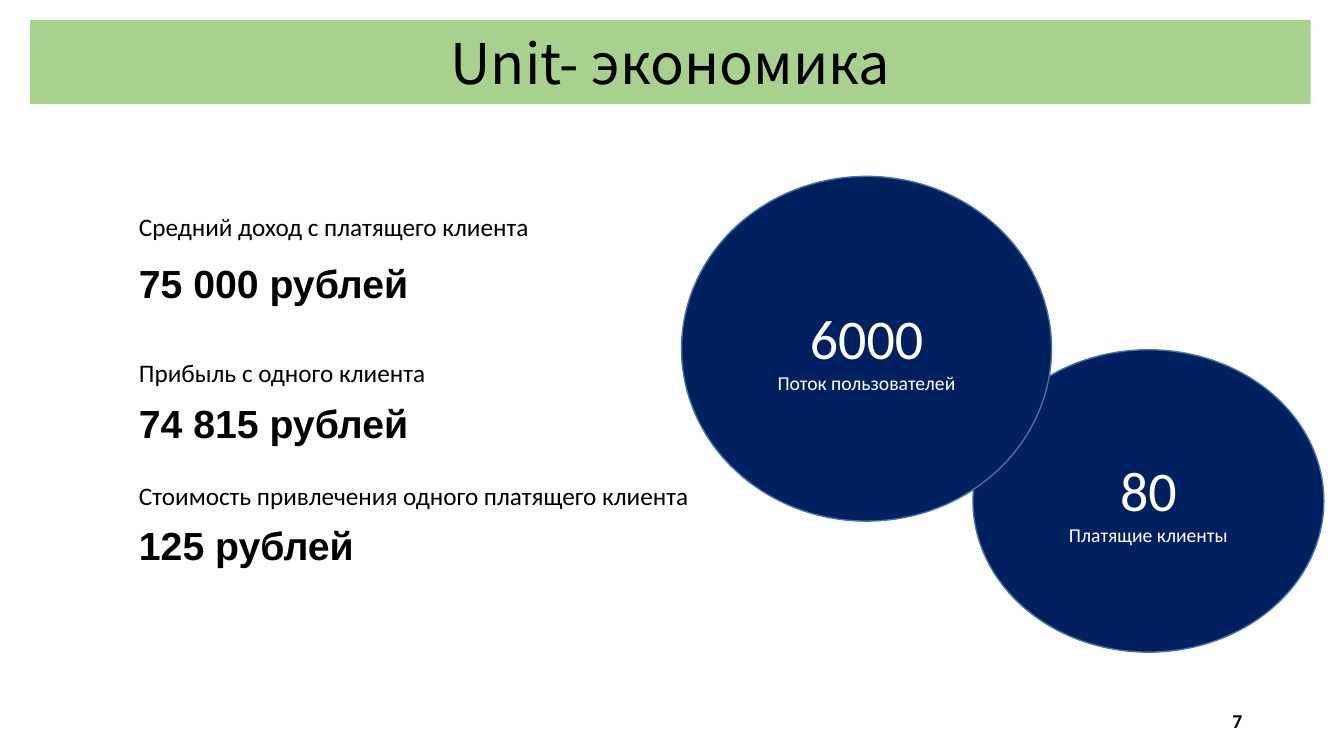
"""Build the unit economics slide: three money figures and two audience circles."""
from dataclasses import dataclass

from lxml import etree
from pptx import Presentation
from pptx import util as u
from pptx.dml.color import RGBColor
from pptx.enum import shapes, text
from pptx.oxml.ns import qn


@dataclass(frozen=True)
class Theme:
    banner: RGBColor = RGBColor(0xA9, 0xD1, 0x8E)
    circle: RGBColor = RGBColor(0x00, 0x20, 0x60)
    outline: RGBColor = RGBColor(0x43, 0x73, 0x9E)
    dark: RGBColor = RGBColor(0, 0, 0)
    light: RGBColor = RGBColor(0xFF, 0xFF, 0xFF)
    title_font: str = "Noto Sans CJK KR"
    body_font: str = "Calibri"
    figure_font: str = "Arial"
    large: int = 40
    figure: int = 28
    caption: int = 18
    small: int = 14


theme = Theme()


def write(paragraph, words, size, font, color, bold=False, align=text.PP_ALIGN.LEFT):
    paragraph.alignment = align
    run = paragraph.add_run()
    run.text = words
    run.font.size = u.Pt(size)
    run.font.name = font
    run.font.bold = bold
    run.font.color.rgb = color


def add_line(left, top, width, height, words, size, font, wrap=True, **style):
    box = slide.shapes.add_textbox(*map(u.Inches, (left, top, width, height)))
    box.text_frame.word_wrap = wrap
    box.text_frame.vertical_anchor = text.MSO_ANCHOR.MIDDLE
    write(box.text_frame.paragraphs[0], words, size, font, theme.dark, **style)


deck = Presentation()
deck.slide_width, deck.slide_height = u.Inches(13.33), u.Inches(7.5)
slide = deck.slides.add_slide(deck.slide_layouts[5])

title = slide.shapes.title
title.left, title.top = u.Inches(0.3), u.Inches(0.2)
title.width, title.height = u.Inches(12.7), u.Inches(0.83)
outline = etree.SubElement(title.element.spPr, qn("a:prstGeom"), prst="round2DiagRect")
etree.SubElement(outline, qn("a:avLst"))
title.fill.solid()
title.fill.fore_color.rgb = theme.banner
title.text_frame.auto_size = text.MSO_AUTO_SIZE.NONE
title.text_frame.vertical_anchor = text.MSO_ANCHOR.MIDDLE
write(title.text_frame.paragraphs[0], "Unit- экономика", theme.large,
      theme.title_font, theme.dark, align=text.PP_ALIGN.CENTER)

metrics = [
    ("Средний доход с платящего клиента", 2.05, 4.11, "75 000 рублей", 2.52),
    ("Прибыль с одного клиента", 3.49, 3.08, "74 815 рублей", 3.91),
    ("Стоимость привлечения одного платящего клиента", 4.72, 5.72, "125 рублей", 5.12),
]
for caption, caption_top, caption_width, amount, amount_top in metrics:
    add_line(1.28, caption_top, caption_width, 0.4, caption,
             theme.caption, theme.body_font, wrap=False)
    add_line(1.28, amount_top, 3.57, 0.57, amount,
             theme.figure, theme.figure_font, bold=True)

audiences = [
    ("80", "Платящие клиенты", 9.65, 3.47, 3.48, 3),
    ("6000", "Поток пользователей", 6.76, 1.75, 3.67, 3.42),
]
for count, label, *place in audiences:
    circle = slide.shapes.add_shape(shapes.MSO_SHAPE.OVAL, *map(u.Inches, place))
    circle.shadow.inherit = False
    circle.fill.solid()
    circle.fill.fore_color.rgb = theme.circle
    circle.line.color.rgb = theme.outline
    circle.line.width = u.Pt(1)
    frame = circle.text_frame
    frame.word_wrap = True
    frame.vertical_anchor = text.MSO_ANCHOR.MIDDLE
    write(frame.paragraphs[0], count, theme.large, theme.body_font,
          theme.light, align=text.PP_ALIGN.CENTER)
    write(frame.add_paragraph(), label, theme.small, theme.body_font,
          theme.light, align=text.PP_ALIGN.CENTER)

add_line(9.42, 6.95, 3, 0.4, "7", theme.small, theme.body_font,
         bold=True, align=text.PP_ALIGN.RIGHT)

deck.save("out.pptx")
